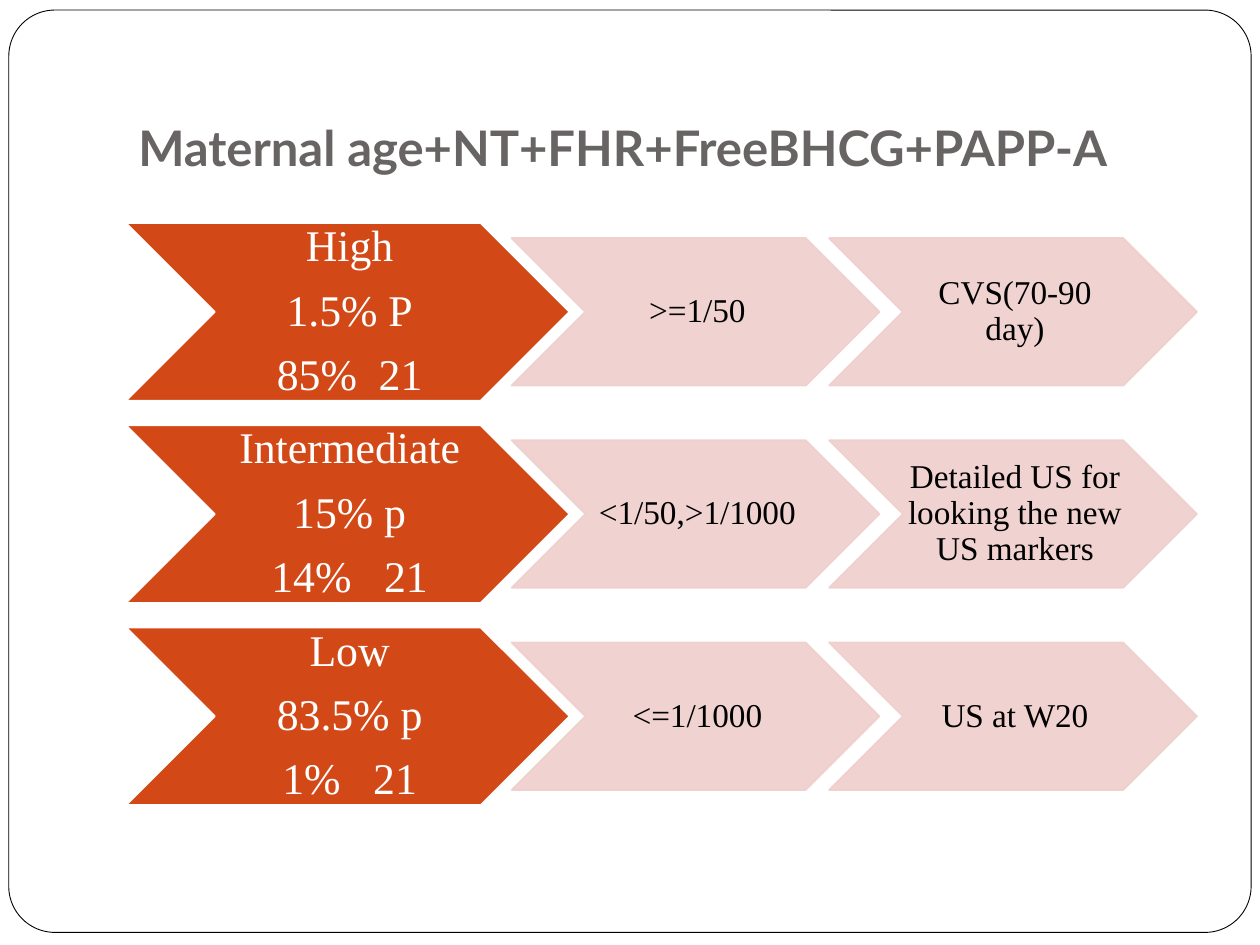
from dataclasses import dataclass

from lxml.etree import SubElement
from pptx import Presentation
from pptx.dml.color import RGBColor
from pptx.enum.shapes import MSO_SHAPE as Shape
from pptx.enum.text import MSO_ANCHOR as Anchor, PP_ALIGN as Align
from pptx.oxml.ns import qn
from pptx.util import Inches, Pt

COLORS = {
    "white": "FFFFFF",
    "black": "000000",
    "title": "696464",
    "risk": "D34817",
    "step": "EFCFCC",
}


@dataclass
class Style:
    width: float
    height: float
    fill: str
    line: str
    text: str
    size: float
    inset: float
    space_after: float
    alpha: int = 100


@dataclass
class Row:
    risk: list[str]
    steps: list[str]


RISK = Style(3.52, 1.41, "risk", "white", "white", 25, 0.02, 9.8)
STEP = Style(2.92, 1.17, "step", "step", "black", 19, 0.01, 7.4, 90)

ROWS = [
    Row(["High", "1.5% P", "85%  21"], [">=1/50", "CVS(70-90 day)"]),
    Row(["Intermediate", "15% p", "14%   21"],
        ["<1/50,>1/1000", "Detailed US for looking the new US markers"]),
    Row(["Low", "83.5% p", "1%   21"], ["<=1/1000", "US at W20"]),
]
LEFT, FIRST_MIDDLE, ROW_PITCH = 1, 2.475, 1.605
STEP_LEFT, STEP_PITCH = 4.06, 2.52


def rgb(name: str) -> RGBColor:
    return RGBColor.from_string(COLORS[name])


def set_alpha(s, percent: int) -> None:
    for clr in s._element.spPr.iter(qn("a:srgbClr")):
        SubElement(clr, qn("a:alpha")).set("val", str(percent * 1000))


def set_insets(tf, left: float, top: float, right: float, bottom: float) -> None:
    tf.margin_left, tf.margin_top = Inches(left), Inches(top)
    tf.margin_right, tf.margin_bottom = Inches(right), Inches(bottom)


def add_run(p, text: str, size: float, font: str, color: str, bold: bool = False) -> None:
    r = p.add_run()
    r.text = text
    r.font.size = Pt(size)
    r.font.name = font
    r.font.bold = bold
    r.font.color.rgb = rgb(color)


def add_frame(sld) -> None:
    s = sld.shapes.add_shape(Shape.ROUNDED_RECTANGLE, Inches(0.07), Inches(0.08),
                             Inches(9.86), Inches(7.32))
    s.adjustments[0] = 0.05
    s.shadow.inherit = False
    s.fill.solid()
    s.fill.fore_color.rgb = rgb("white")
    s.line.color.rgb = rgb("black")
    s.line.width = Pt(0.5)


def add_title(sld, text: str) -> None:
    s = sld.shapes.add_textbox(Inches(1), Inches(0.25), Inches(8.5), Inches(1.25))
    tf = s.text_frame
    tf.word_wrap = True
    tf.vertical_anchor = Anchor.BOTTOM
    set_insets(tf, 0.1, 0.05, 0.1, 0.1)
    add_run(tf.paragraphs[0], text, 28, "Lato", "title", True)


def add_chevron(sld, left: float, middle: float, lines: list[str], style: Style) -> None:
    s = sld.shapes.add_shape(Shape.CHEVRON, Inches(left), Inches(middle - style.height / 2),
                             Inches(style.width), Inches(style.height))
    s.shadow.inherit = False
    s.fill.solid()
    s.fill.fore_color.rgb = rgb(style.fill)
    s.line.color.rgb = rgb(style.line)
    s.line.width = Pt(1)
    if style.alpha < 100:
        set_alpha(s, style.alpha)
    tf = s.text_frame
    tf.word_wrap = True
    tf.vertical_anchor = Anchor.MIDDLE
    set_insets(tf, 0.03, style.inset, 0, style.inset)
    for i, line in enumerate(lines):
        p = tf.add_paragraph() if i else tf.paragraphs[0]
        p.alignment = Align.CENTER
        p.line_spacing = 0.9
        p.space_after = Pt(style.space_after)
        add_run(p, line, style.size, "Times New Roman", style.text)


def main() -> None:
    prs = Presentation()
    prs.slide_width, prs.slide_height = Inches(10), Inches(7.5)
    sld = prs.slides.add_slide(prs.slide_layouts[6])
    add_frame(sld)
    add_title(sld, "Maternal age+NT+FHR+FreeBHCG+PAPP-A")
    for i, row in enumerate(ROWS):
        middle = FIRST_MIDDLE + i * ROW_PITCH
        add_chevron(sld, LEFT, middle, row.risk, RISK)
        for j, step in enumerate(row.steps):
            add_chevron(sld, STEP_LEFT + j * STEP_PITCH, middle, [step], STEP)
    prs.save("out.pptx")


if __name__ == "__main__":
    main()
